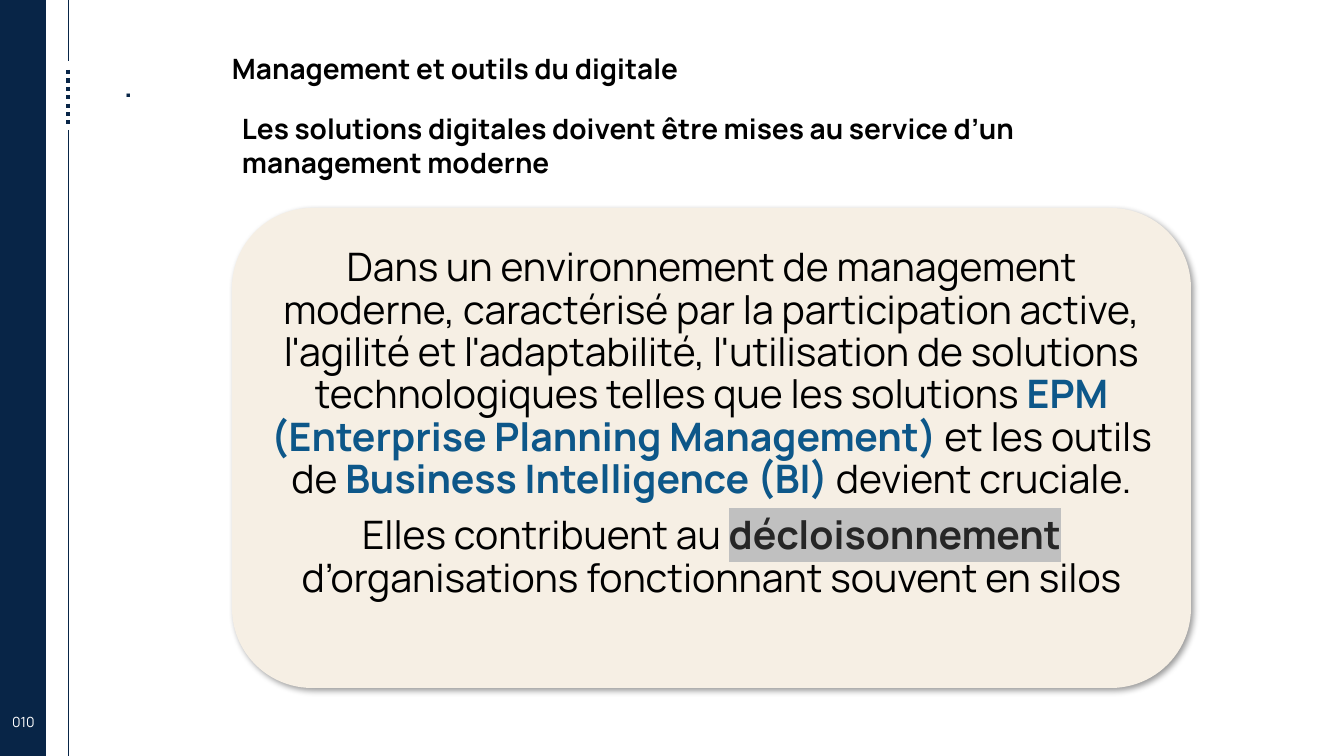
"""Build the slide on digital tools serving modern management."""
from lxml.etree import SubElement
from pptx import Presentation
from pptx.dml.color import RGBColor
from pptx.enum.dml import MSO_LINE
from pptx.enum.shapes import MSO_CONNECTOR, MSO_SHAPE
from pptx.enum.text import PP_ALIGN
from pptx.oxml.ns import qn
from pptx.util import Pt

WIDTH, HEIGHT = 1344, 756
EMU_PER_PIXEL = 914400 / 100.8
FONT = "Manrope"
NAVY, BLUE, CREAM = "082547", "0D5789", "F6EFE4"
BLACK, WHITE, CHARCOAL, SILVER = "000000", "FFFFFF", "262626", "C0C0C0"

SIDEBAR = (0, 0, 46, HEIGHT)
CARD = (232, 208, 959, 480)
RULE_X = 68
RULES = [(0, 61, 0.5, None), (70, 124, 3, MSO_LINE.ROUND_DOT), (130, HEIGHT, 0.5, None)]

LABELS = [
    ((7, 714, 33, 17), 0, 10, WHITE, False, PP_ALIGN.CENTER, "010"),
    ((124, 70, 727, 30), 0, 20, NAVY, True, PP_ALIGN.LEFT, "."),
    ((232, 51, 866, 34), 0, 20, BLACK, True, PP_ALIGN.LEFT, "Management et outils du digitale"),
    ((232, 107, 975, 112), 10, 20, BLACK, True, PP_ALIGN.LEFT,
     "Les solutions digitales doivent être mises au service d’un management moderne"),
]

BODY_BOX = (255, 243, 913, 145)
PLAIN, KEY, MARKED = (BLACK, False, None), (BLUE, True, None), (CHARCOAL, True, SILVER)
BODY = [
    [("Dans un environnement de management moderne, caractérisé par la participation active, "
      "l'agilité et l'adaptabilité, l'utilisation de solutions technologiques telles que les "
      "solutions ", PLAIN),
     ("EPM (Enterprise Planning Management)", KEY),
     (" et les outils de ", PLAIN),
     ("Business Intelligence (BI) ", KEY),
     ("devient cruciale.", PLAIN)],
    [("Elles contribuent au ", PLAIN),
     ("décloisonnement", MARKED),
     (" d’organisations fonctionnant souvent en silos", PLAIN)],
]


def px(*lengths):
    return [round(length * EMU_PER_PIXEL) for length in lengths]


def color(value):
    return RGBColor.from_string(value)


def add_block(slide, kind, box, fill):
    shape = slide.shapes.add_shape(kind, *px(*box))
    shape.shadow.inherit = False
    shape.fill.solid()
    shape.fill.fore_color.rgb = color(fill)
    shape.line.fill.background()
    return shape


def add_shadow(shape):
    effects = shape._element.spPr.find(qn("a:effectLst"))
    shadow = SubElement(effects, qn("a:outerShdw"), blurRad=str(Pt(4)), dist=str(Pt(3)),
                        dir="2700000", algn="tl", rotWithShape="0")
    shade = SubElement(shadow, qn("a:srgbClr"), val=BLACK)
    SubElement(shade, qn("a:alpha"), val="40000")


def add_rule(slide, top, bottom, width, dash):
    line = slide.shapes.add_connector(MSO_CONNECTOR.STRAIGHT, *px(RULE_X, top, RULE_X, bottom))
    line.line.color.rgb = color(NAVY)
    line.line.width = Pt(width)
    if dash:
        line.line.dash_style = dash
    SubElement(line._element.spPr, qn("a:effectLst"))


def add_text_frame(slide, box, inset):
    frame = slide.shapes.add_textbox(*px(*box)).text_frame
    frame.word_wrap = True
    frame.margin_left, frame.margin_right = px(inset, inset)
    frame.margin_top, frame.margin_bottom = px(inset / 2, inset / 2)
    return frame


def format_run(run, size, ink, bold, highlight=None):
    run.font.name = FONT
    run.font.size = Pt(size)
    run.font.bold = bold
    run.font.color.rgb = color(ink)
    if highlight:
        properties = run.font._element
        mark = SubElement(properties, qn("a:highlight"))
        SubElement(mark, qn("a:srgbClr"), val=highlight)
        properties.find(qn("a:solidFill")).addnext(mark)


def add_label(slide, box, inset, size, ink, bold, align, text):
    frame = add_text_frame(slide, box, inset)
    frame.text = text
    paragraph = frame.paragraphs[0]
    paragraph.alignment = align
    format_run(paragraph.runs[0], size, ink, bold)


def add_body(slide):
    frame = add_text_frame(slide, BODY_BOX, 10)
    for index, pieces in enumerate(BODY):
        paragraph = frame.add_paragraph() if index else frame.paragraphs[0]
        paragraph.alignment = PP_ALIGN.CENTER
        paragraph.line_spacing = 0.9
        paragraph.space_before = Pt(10)
        for text, style in pieces:
            run = paragraph.add_run()
            run.text = text
            format_run(run, 28, *style)


def main():
    presentation = Presentation()
    presentation.slide_width, presentation.slide_height = px(WIDTH, HEIGHT)
    slide = presentation.slides.add_slide(presentation.slide_layouts[6])
    for rule in RULES:
        add_rule(slide, *rule)
    add_block(slide, MSO_SHAPE.RECTANGLE, SIDEBAR, NAVY)
    for label in LABELS:
        add_label(slide, *label)
    add_shadow(add_block(slide, MSO_SHAPE.ROUNDED_RECTANGLE, CARD, CREAM))
    add_body(slide)
    presentation.save("out.pptx")


if __name__ == "__main__":
    main()
